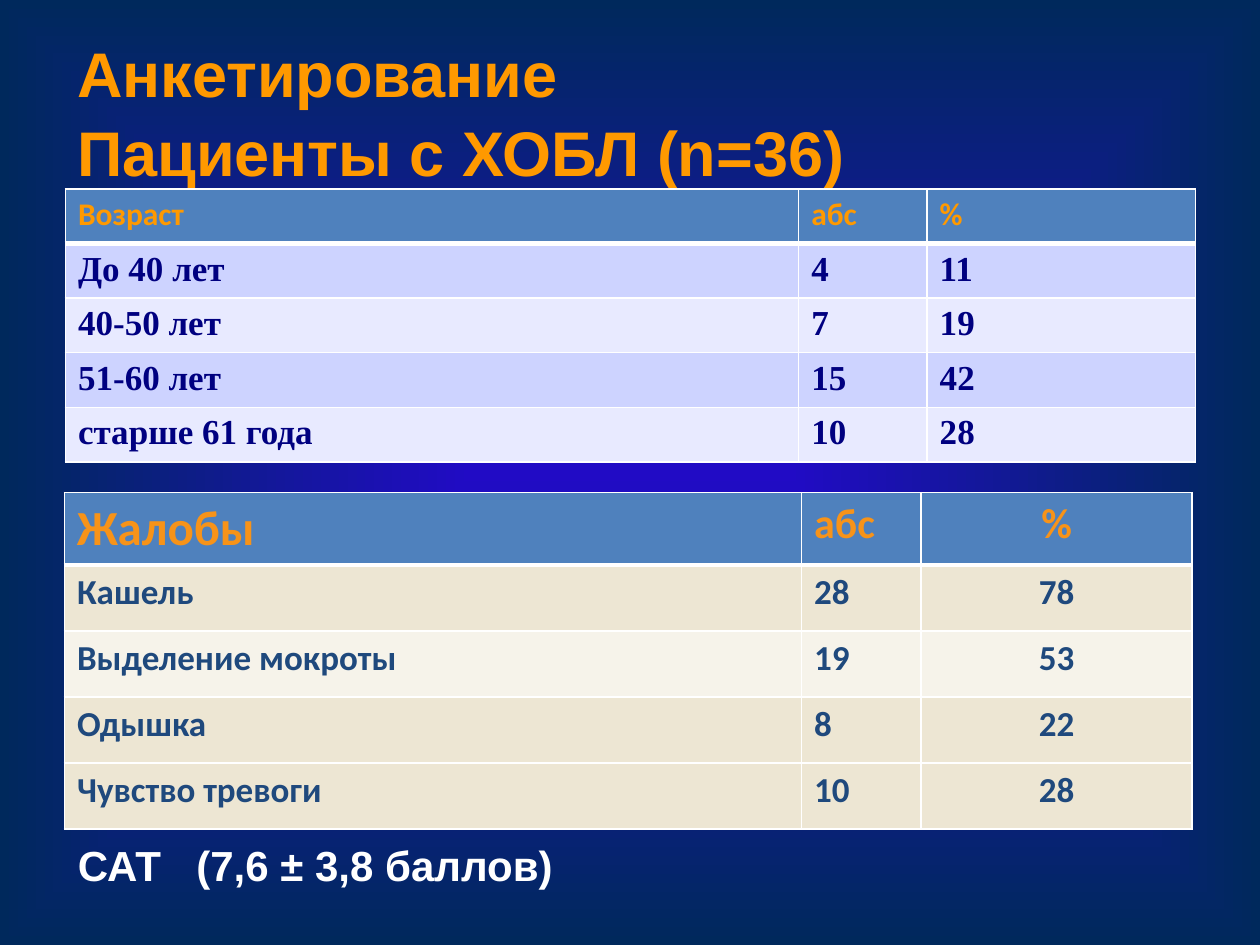
from collections import namedtuple
from dataclasses import dataclass

import pptx
import pptx.dml.color
import pptx.enum.text
import pptx.oxml
import pptx.oxml.ns
import pptx.util
from pptx.util import Cm, Pt

NS = pptx.oxml.ns.nsdecls("a")
ALIGN = pptx.enum.text.PP_ALIGN
ANCHOR = pptx.enum.text.MSO_ANCHOR

Box = namedtuple("Box", "left top width height")
Style = namedtuple("Style", "font size color")


@dataclass(frozen=True)
class Theme:
    glow: str = "210BC5"
    edge: str = "00295C"
    border: str = "FFFFFF"
    header_fill: str = "4F81BD"
    lilac: tuple = ("CDD3FF", "E8EAFF")
    sand: tuple = ("EDE6D3", "F6F3EA")
    title: Style = Style("Arial", 36, "FF9900")
    score: Style = Style("Arial", 24, "FFFFFF")
    age_header: Style = Style("Calibri", 18, "FF9900")
    age_body: Style = Style("Times New Roman", 20, "000080")
    complaint_title: Style = Style("Calibri", 28, "F79319")
    complaint_header: Style = Style("Calibri", 24, "F79319")
    complaint_body: Style = Style("Calibri", 20, "1F497D")


THEME = Theme()


def rgb(value):
    return pptx.dml.color.RGBColor.from_string(value)


def format_paragraph(p, style, align=ALIGN.LEFT):
    p.alignment = align
    p.font.name = style.font
    p.font.size = Pt(style.size)
    p.font.color.rgb = rgb(style.color)
    p.font.bold = True


def paint_background(s):
    """Rectangular gradient that glows from the centre."""
    fill = s.background.fill
    fill.gradient()
    for stop, color in zip(fill.gradient_stops, (THEME.glow, THEME.edge)):
        stop.color.rgb = rgb(color)
    grad = s.element.xpath(".//p:bg//a:gradFill")[0]
    for lin in grad.xpath("./a:lin"):
        grad.remove(lin)
    grad.append(pptx.oxml.parse_xml(
        f'<a:path {NS} path="shape"><a:fillToRect l="50000" t="50000" '
        'r="50000" b="50000"/></a:path>'))


def add_title(s, box, lines):
    sp = s.shapes.title
    sp.left, sp.top, sp.width, sp.height = box
    tf = sp.text_frame
    tf.auto_size = pptx.enum.text.MSO_AUTO_SIZE.NONE
    tf.vertical_anchor = ANCHOR.MIDDLE
    tf.text = "\n".join(lines)
    for p in tf.paragraphs:
        format_paragraph(p, THEME.title)
        p.line_spacing = 1.05


def add_score(s, box, label, value):
    tf = s.shapes.add_textbox(*box).text_frame
    tf.word_wrap = True
    tf.vertical_anchor = ANCHOR.MIDDLE
    p = tf.paragraphs[0]
    p.text = f"{label}\t{value}"
    format_paragraph(p, THEME.score)
    p._p.get_or_add_pPr().insert(0, pptx.oxml.parse_xml(
        f'<a:tabLst {NS}><a:tab pos="{Cm(2.39)}" algn="l"/></a:tabLst>'))


def add_borders(cell, top, bottom):
    tc_pr = cell._tc.get_or_add_tcPr()
    for i, (side, width) in enumerate(
            (("L", 1), ("R", 1), ("T", top), ("B", bottom))):
        tc_pr.insert(i, pptx.oxml.parse_xml(
            f'<a:ln{side} {NS} w="{Pt(width)}"><a:solidFill>'
            f'<a:srgbClr val="{THEME.border}"/></a:solidFill></a:ln{side}>'))


def add_count_table(s, box, widths, header_height, rows, header_styles,
                    body_style, fills, percent_align):
    """Table of label, count and percent; the body rows share the height left."""
    table = s.shapes.add_table(len(rows), len(widths), *box).table
    for column, width in zip(table.columns, widths):
        column.width = Cm(width)
    body_height = (box.height - header_height) // (len(rows) - 1)
    for i, values in enumerate(rows):
        table.rows[i].height = body_height if i else header_height
        for j, value in enumerate(values):
            cell = table.cell(i, j)
            cell.text = value
            format_paragraph(cell.text_frame.paragraphs[0],
                             body_style if i else header_styles[j],
                             percent_align if j == 2 else ALIGN.LEFT)
            cell.fill.solid()
            cell.fill.fore_color.rgb = rgb(fills[i - 1] if i else THEME.header_fill)
            add_borders(cell, top=3 if i == 1 else 1, bottom=1 if i else 3)


def main():
    prs = pptx.Presentation()
    prs.slide_width, prs.slide_height = Cm(25.4), Cm(19.05)
    s = prs.slides.add_slide(prs.slide_layouts[5])
    paint_background(s)

    add_title(s, Box(Cm(1.3), Cm(0.71), Cm(22.8), Cm(3)),
              ["Анкетирование", "Пациенты с ХОБЛ (n=36)"])

    add_count_table(
        s, Box(Cm(1.32), Cm(3.81), Cm(22.78), Cm(5.5)),
        widths=(14.78, 2.59, 5.41), header_height=Cm(1.1),
        rows=[("Возраст", "абс", "%"),
              ("До 40 лет", "4", "11"),
              ("40-50 лет", "7", "19"),
              ("51-60 лет", "15", "42"),
              ("старше 61 года", "10", "28")],
        header_styles=[THEME.age_header] * 3, body_style=THEME.age_body,
        fills=THEME.lilac * 2, percent_align=ALIGN.LEFT)

    dark, light = THEME.sand
    add_count_table(
        s, Box(Cm(1.3), Cm(9.93), Cm(22.73), Cm(6.78)),
        widths=(14.86, 2.41, 5.46), header_height=Cm(1.46),
        rows=[("Жалобы", "абс", "%"),
              ("Кашель", "28", "78"),
              ("Выделение мокроты", "19", "53"),
              ("Одышка", "8", "22"),
              ("Чувство тревоги", "10", "28")],
        header_styles=[THEME.complaint_title] + [THEME.complaint_header] * 2,
        body_style=THEME.complaint_body,
        fills=(dark, light, dark, dark), percent_align=ALIGN.CENTER)

    add_score(s, Box(Cm(1.32), Cm(16.74), Cm(22.78), Cm(1.4)),
              "САТ", "(7,6 ± 3,8 баллов)")
    prs.save("out.pptx")


if __name__ == "__main__":
    main()
